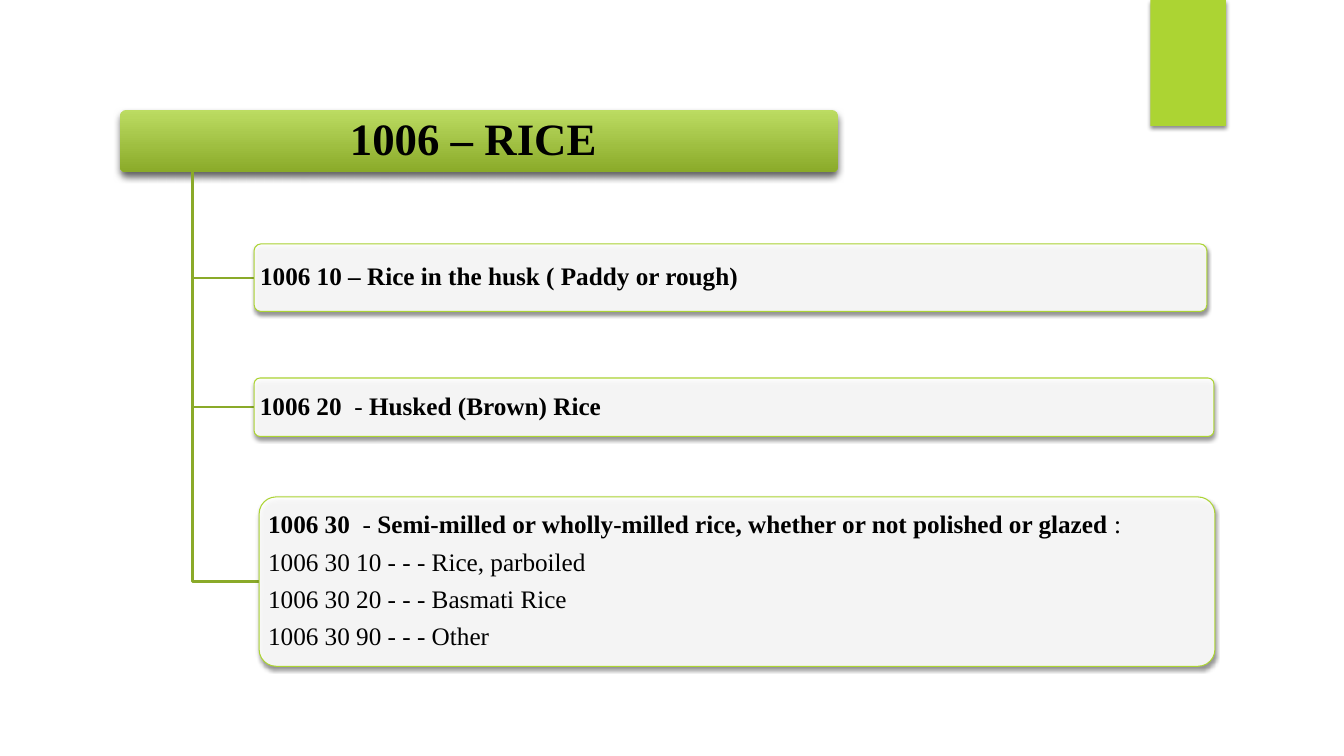
"""Builds the tariff tree slide for heading 1006, rice."""
import pptx
import pptx.util
import pptx.dml.color
import pptx.enum.shapes
import pptx.enum.text
import pptx.oxml
import pptx.oxml.ns
from lxml import etree

Inches = pptx.util.Inches
Pt = pptx.util.Pt
RGBColor = pptx.dml.color.RGBColor
MSO_SHAPE = pptx.enum.shapes.MSO_SHAPE
PP_ALIGN = pptx.enum.text.PP_ALIGN
qn = pptx.oxml.ns.qn

LIME = RGBColor(0xAC, 0xD4, 0x33)
LIGHT_LIME = RGBColor(0xBC, 0xDC, 0x62)
OLIVE = RGBColor(0x8A, 0xAA, 0x29)
WHITE = RGBColor(0xFF, 0xFF, 0xFF)
BLACK = RGBColor(0, 0, 0)

FONT = "Times New Roman"
TRUNK_X = 1.91
HEADING_BOTTOM = 1.71

SUBHEADINGS = [
    ((2.52, 2.42, 9.45, 0.67), [
        [("1006 10 – Rice in the husk ( Paddy or rough)", True)],
    ]),
    ((2.52, 3.75, 9.52, 0.58), [
        [("1006 20 ", True), (" - ", False), ("Husked (Brown) Rice", True)],
    ]),
    ((2.57, 4.93, 9.48, 1.68), [
        [("1006 30 ", True), (" - ", False),
         ("Semi-milled or wholly-milled rice, whether or not polished or glazed ", True),
         (":", False)],
        [("1006 30 10 - - - Rice, parboiled", False)],
        [("1006 30 20 - - - Basmati Rice", False)],
        [("1006 30 90 - - - Other", False)],
    ]),
]


def add_shadow(s, alpha=45, blur=3, distance=2):
    """Give a shape a black shadow that falls straight down."""
    s.shadow.inherit = False
    effects = s._element.spPr.find(qn("a:effectLst"))
    shadow = etree.SubElement(
        effects, qn("a:outerShdw"), blurRad=str(Pt(blur)), dist=str(Pt(distance)),
        dir="5400000", algn="ctr", rotWithShape="0")
    color = etree.SubElement(shadow, qn("a:srgbClr"), val=str(BLACK))
    etree.SubElement(color, qn("a:alpha"), val=str(alpha * 1000))


def add_box(slide, kind, box):
    """Add a preset shape without an outline."""
    s = slide.shapes.add_shape(kind, *[Inches(v) for v in box])
    s.line.fill.background()
    if kind == MSO_SHAPE.ROUNDED_RECTANGLE:
        s.adjustments[0] = 0.1
    return s


def write_text(s, paragraphs, size, align, margins):
    """Fill a shape with paragraphs made of (text, bold) runs."""
    tf = s.text_frame
    tf.word_wrap = True
    tf.vertical_anchor = pptx.enum.text.MSO_ANCHOR.MIDDLE
    tf.margin_left = tf.margin_right = Inches(margins[0])
    tf.margin_top = tf.margin_bottom = Inches(margins[1])
    for i, runs in enumerate(paragraphs):
        p = tf.paragraphs[0] if i == 0 else tf.add_paragraph()
        p.alignment = align
        p.line_spacing = 0.9
        if i < len(paragraphs) - 1:
            p.space_after = Pt(7.2)
        for text, bold in runs:
            r = p.add_run()
            r.text = text
            r.font.name = FONT
            r.font.size = Pt(size)
            r.font.bold = bold
            r.font.color.rgb = BLACK


def add_tab(slide):
    """Add the lime tab at the top edge."""
    s = add_box(slide, MSO_SHAPE.RECTANGLE, (11.41, 0, 0.75, 1.25))
    s.fill.solid()
    s.fill.fore_color.rgb = LIME
    add_shadow(s)


def add_heading(slide, text):
    """Add the gradient bar with the heading."""
    s = add_box(slide, MSO_SHAPE.ROUNDED_RECTANGLE, (1.19, 1.09, 7.12, 0.62))
    s.fill.gradient()
    s.fill.gradient_angle = 270
    for stop, color in zip(s.fill.gradient_stops, (LIGHT_LIME, OLIVE)):
        stop.color.rgb = color
    add_shadow(s, 60, 5, 3)
    write_text(s, [[(text, True)]], 32, PP_ALIGN.CENTER, (0.07, 0.04))


def add_branch(slide, box):
    """Draw the elbow line from the heading to the middle of a box."""
    left, top, _, height = box
    middle = Inches(top + height / 2)
    trunk = Inches(TRUNK_X)
    builder = slide.shapes.build_freeform(trunk, Inches(HEADING_BOTTOM))
    builder.add_line_segments([(trunk, middle), (Inches(left), middle)], close=False)
    s = builder.convert_to_shape()
    s.shadow.inherit = False
    s.fill.background()
    s.line.color.rgb = OLIVE
    s.line.width = Pt(1.5)


def add_subheading(slide, box, paragraphs):
    """Add an outlined, slightly transparent box with its text."""
    s = add_box(slide, MSO_SHAPE.ROUNDED_RECTANGLE, box)
    s.fill.solid()
    s.fill.fore_color.rgb = WHITE
    color = s._element.spPr.find(qn("a:solidFill")).find(qn("a:srgbClr"))
    etree.SubElement(color, qn("a:alpha"), val="90000")
    s.line.color.rgb = LIME
    s.line.width = Pt(0.75)
    add_shadow(s)
    write_text(s, paragraphs, 18, PP_ALIGN.LEFT, (0.04, 0.03))


def main():
    """Build and save the slide."""
    prs = pptx.Presentation()
    prs.slide_width = Inches(13.33)
    prs.slide_height = Inches(7.5)
    slide = prs.slides.add_slide(prs.slide_layouts[6])
    add_tab(slide)
    add_heading(slide, "1006 – RICE ")
    for box, paragraphs in SUBHEADINGS:
        add_branch(slide, box)
        add_subheading(slide, box, paragraphs)
    prs.save("out.pptx")


if __name__ == "__main__":
    main()
